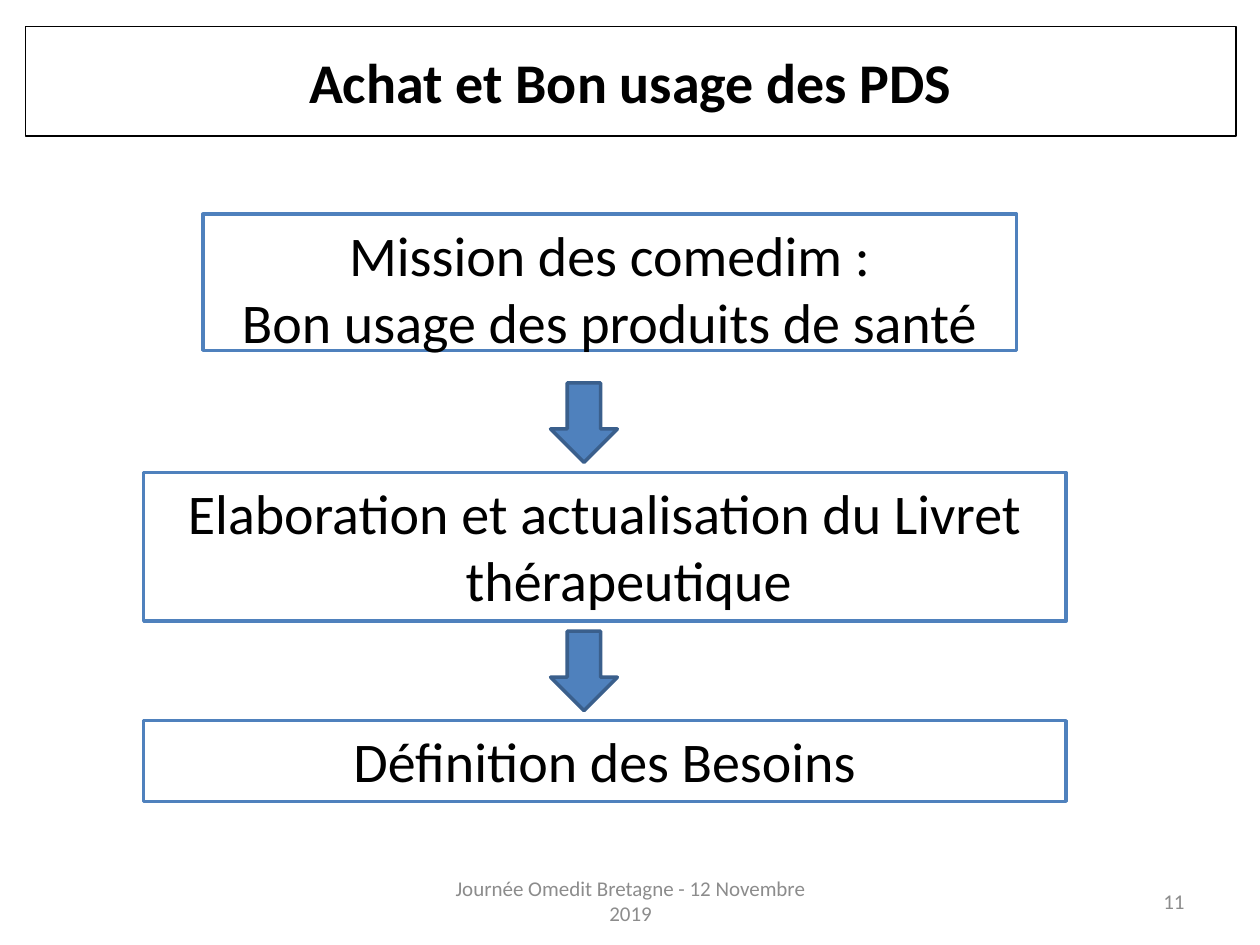
"""Build the slide on purchasing and proper use of health products."""
from pptx import Presentation
from pptx.dml.color import RGBColor
from pptx.enum.shapes import MSO_SHAPE as SHAPE
from pptx.enum.text import MSO_ANCHOR as ANCHOR, PP_ALIGN as ALIGN
from pptx.util import Inches, Pt

BLACK, WHITE, BLUE, NAVY, GREY = "000000", "FFFFFF", "4F81BD", "3A5F8C", "8C8C8C"
HANG = 0.38

prs = Presentation()
prs.slide_width, prs.slide_height = Inches(10), Inches(7.5)
s = prs.slides.add_slide(prs.slide_layouts[5])


def area(x, y, w, h):
    """Turn percentages of the slide into lengths."""
    W, H = prs.slide_width, prs.slide_height
    return [int(share * side / 100) for share, side in zip((x, y, w, h), (W, H, W, H))]


def style(sp, line=None, width=2, fill=None, lines=(), size=32, color=BLACK,
          align=ALIGN.CENTER, anchor=ANCHOR.MIDDLE):
    """Apply outline, fill and text to a shape."""
    if line:
        sp.line.color.rgb = RGBColor.from_string(line)
        sp.line.width = Pt(width)
    if fill:
        sp.shadow.inherit = False
        sp.fill.solid()
        sp.fill.fore_color.rgb = RGBColor.from_string(fill)
    tf = sp.text_frame
    tf.word_wrap, tf.vertical_anchor = True, anchor
    for i, text in enumerate(lines):
        p = tf.paragraphs[0] if i == 0 else tf.add_paragraph()
        p.text, p.alignment = text, align
        p.font.name, p.font.size = "Calibri", Pt(size)
        p.font.color.rgb = RGBColor.from_string(color)


title = s.shapes.title
title.left, title.top, title.width, title.height = area(2, 2.8, 96.1, 11.6)
style(title, BLACK, 0.75, lines=["Achat et Bon usage des PDS"])
title.text_frame.paragraphs[0].font.bold = True

steps = [
    (16.1, 22.67, 64.6, 14.4, ["Mission des comedim :", "Bon usage des produits de santé"]),
    (11.4, 50, 73.2, 15.73, ["Elaboration et actualisation du Livret thérapeutique"]),
    (11.4, 76.27, 73.2, 8.53, ["Définition des Besoins"]),
]
for i, (x, y, w, h, lines) in enumerate(steps):
    if i:
        arrow = s.shapes.add_shape(SHAPE.DOWN_ARROW, *area(43.7, y - 9.47, 5.3, 8.4))
        style(arrow, NAVY, fill=BLUE)
    box = s.shapes.add_shape(SHAPE.RECTANGLE, *area(x, y, w, h))
    style(box, BLUE, fill=WHITE, lines=lines, anchor=ANCHOR.TOP)
    for p in box.text_frame.paragraphs:
        pPr = p._p.get_or_add_pPr()
        pPr.set("marL", str(Inches(HANG)))
        pPr.set("indent", str(Inches(-HANG)))
    if i == 0:
        first = box.text_frame.paragraphs[0]._p.get_or_add_pPr()
        first.set("indent", str(Inches(-HANG - 0.2)))

footers = [
    (34.2, 31.7, "Journée Omedit Bretagne - 12 Novembre 2019", ALIGN.CENTER),
    (71.7, 23.3, "11", ALIGN.RIGHT),
]
for x, w, text, align in footers:
    footer = s.shapes.add_textbox(*area(x, 92.67, w, 5.33))
    style(footer, lines=[text], size=12, color=GREY, align=align)

prs.save("out.pptx")
